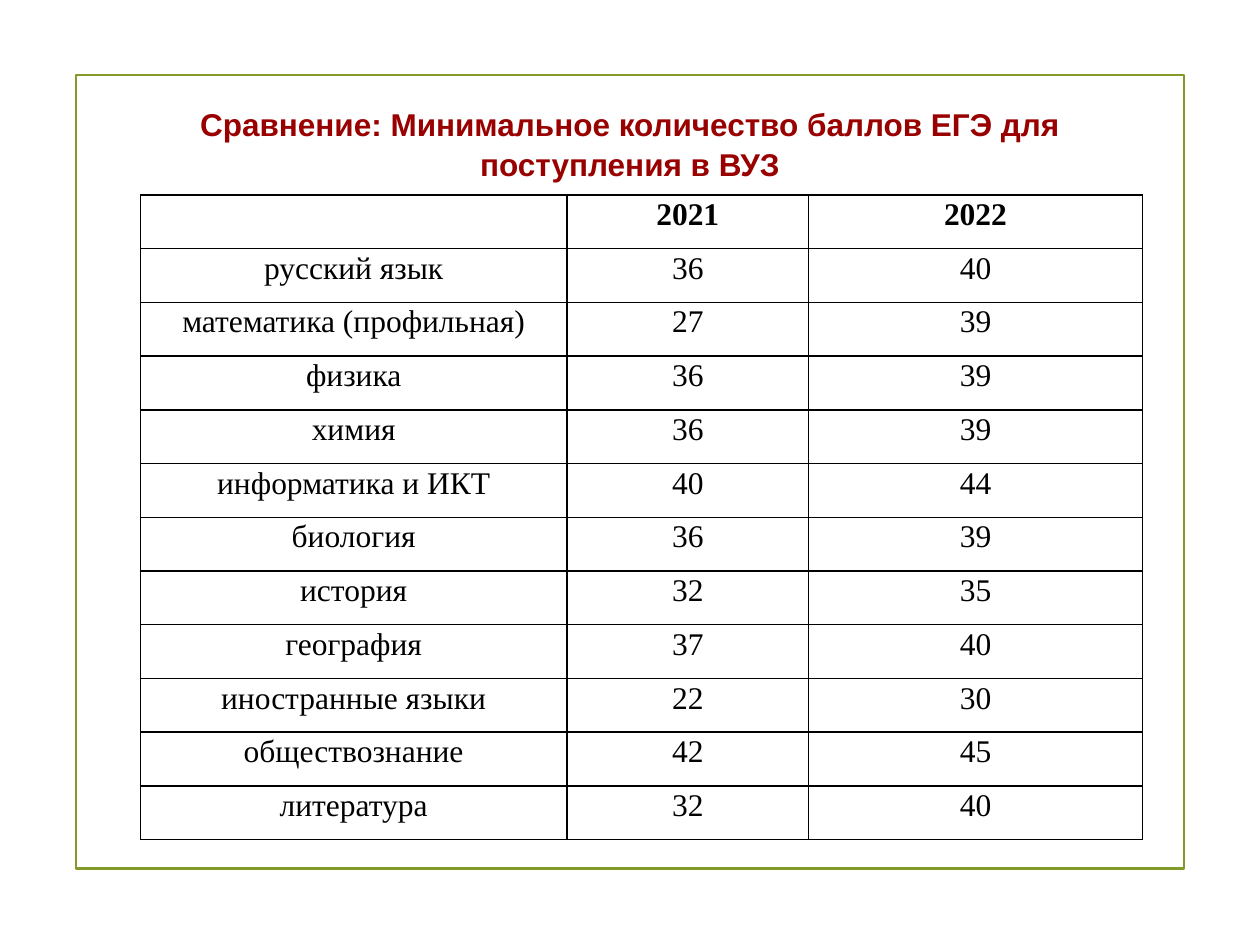
from pptx import Presentation
from pptx import util as u
from pptx.dml.color import RGBColor
from pptx.enum import shapes, text
from pptx.oxml import parse_xml
from pptx.oxml.ns import nsdecls

GREEN = RGBColor(0x83, 0x99, 0x2A)
RED = RGBColor(0x99, 0x00, 0x00)
BLACK = RGBColor(0x00, 0x00, 0x00)


def write(tf, content, font="Times New Roman", size=18, color=BLACK, bold=False, after=0):
    tf.word_wrap = True
    p = tf.paragraphs[0]
    p.alignment = text.PP_ALIGN.CENTER
    p.line_spacing = 1.07
    p.space_after = u.Pt(after)
    r = p.add_run()
    r.text = content
    r.font.name, r.font.size = font, u.Pt(size)
    r.font.bold, r.font.color.rgb = bold, color


def add_borders(cell):
    tcPr = cell._tc.get_or_add_tcPr()
    for i, side in enumerate(("lnL", "lnR", "lnT", "lnB")):
        tcPr.insert(i, parse_xml(
            f'<a:{side} {nsdecls("a")} w="{u.Pt(1)}"><a:solidFill>'
            f'<a:srgbClr val="{BLACK}"/></a:solidFill></a:{side}>'))


prs = Presentation()
prs.slide_width, prs.slide_height = u.Cm(25.4), u.Cm(19.05)
s = prs.slides.add_slide(prs.slide_layouts[6])

# Frame
sp = s.shapes.add_shape(shapes.MSO_SHAPE.RECTANGLE, u.Cm(1.54), u.Cm(1.51), u.Cm(22.33), u.Cm(16))
sp.shadow.inherit = False
sp.fill.background()
sp.line.color.rgb = GREEN
sp.line.width = u.Pt(1.25)

# Title
tb = s.shapes.add_textbox(u.Cm(2.3), u.Cm(1.93), u.Cm(20.8), u.Cm(1.9))
write(tb.text_frame, "Сравнение: Минимальное количество баллов ЕГЭ для поступления в ВУЗ",
      font="Arial", color=RED, bold=True, after=8)

# Table of minimum scores
rows = [
    ("", "2021", "2022"),
    ("русский язык", "36", "40"),
    ("математика (профильная)", "27", "39"),
    ("физика", "36", "39"),
    ("химия", "36", "39"),
    ("информатика и ИКТ", "40", "44"),
    ("биология", "36", "39"),
    ("история", "32", "35"),
    ("география", "37", "40"),
    ("иностранные языки", "22", "30"),
    ("обществознание", "42", "45"),
    ("литература", "32", "40"),
]
widths = (8.6, 4.87, 6.73)
tbl = s.shapes.add_table(len(rows), len(widths), u.Cm(2.83), u.Cm(3.93),
                         u.Cm(sum(widths)), u.Cm(13)).table
tbl.first_row = tbl.horz_banding = False
for col, width in zip(tbl.columns, widths):
    col.width = u.Cm(width)
for i, row in enumerate(rows):
    for j, value in enumerate(row):
        cell = tbl.cell(i, j)
        cell.fill.background()
        add_borders(cell)
        if value:
            cell.margin_left = cell.margin_right = cell.margin_top = cell.margin_bottom = 0
            write(cell.text_frame, value, bold=i == 0)

prs.save("out.pptx")
